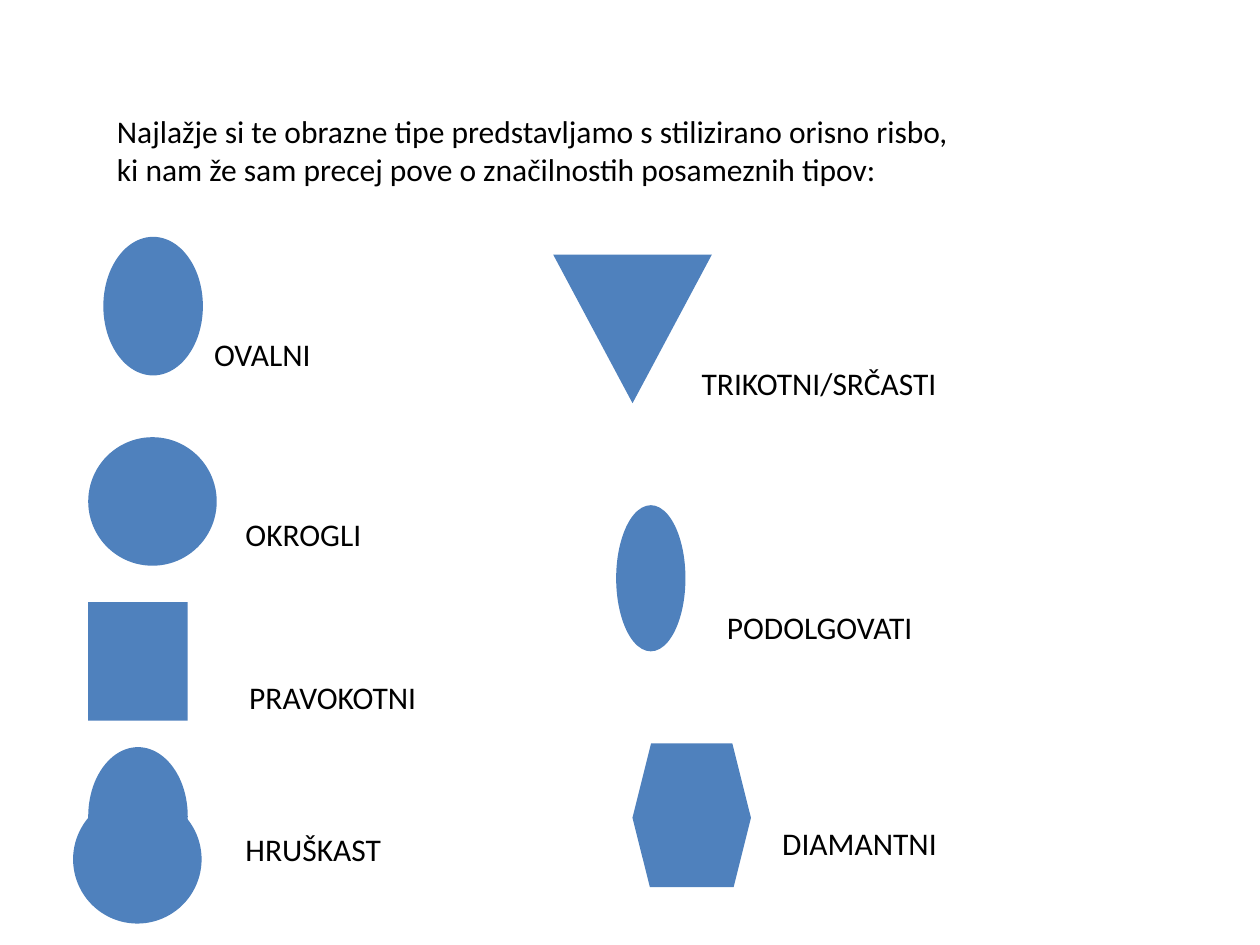
from dataclasses import dataclass

import pptx
import pptx.dml.color
import pptx.enum.shapes
import pptx.enum.text
import pptx.util

Inches = pptx.util.Inches
Kind = pptx.enum.shapes.MSO_SHAPE
COLORS = {"face": "4F81BD", "text": "000000"}


@dataclass
class FacePart:
    kind: Kind
    left: float
    top: float
    width: float
    height: float
    rotation: int = 0


@dataclass
class Label:
    text: str
    left: float
    top: float
    width: float
    height: float = 0.4
    wrap: bool = False


FACE_PARTS = [
    # Left column: oval, round, rectangular, pear
    FacePart(Kind.OVAL, 0.82, 1.88, 0.79, 1.1),
    FacePart(Kind.OVAL, 0.7, 3.47, 1.02, 1.02),
    FacePart(Kind.RECTANGLE, 0.7, 4.78, 0.79, 0.94),
    FacePart(Kind.OVAL, 0.58, 6.31, 1.02, 1.02),
    FacePart(Kind.OVAL, 0.7, 5.93, 0.79, 1.1),
    # Right column: triangular, elongated, diamond
    FacePart(Kind.ISOSCELES_TRIANGLE, 4.39, 2.02, 1.26, 1.18, 180),
    FacePart(Kind.OVAL, 4.89, 4.01, 0.55, 1.16),
    FacePart(Kind.TRAPEZOID, 5.02, 5.9, 0.94, 0.59),
    FacePart(Kind.TRAPEZOID, 5.02, 6.49, 0.94, 0.55, 180),
]

LABELS = [
    Label(
        "Najlažje si te obrazne tipe predstavljamo s stilizirano orisno risbo, "
        "ki nam že sam precej pove o značilnostih posameznih tipov:",
        0.83, 0.84, 6.93, 0.71, wrap=True,
    ),
    Label("OVALNI", 1.6, 2.61, 0.98),
    Label("OKROGLI", 1.85, 4.04, 1.13),
    Label("PRAVOKOTNI", 1.88, 5.33, 1.54),
    Label("HRUŠKAST", 1.85, 6.54, 1.3),
    Label("TRIKOTNI/SRČASTI", 5.47, 2.84, 2.08),
    Label("PODOLGOVATI", 5.67, 4.78, 1.69),
    Label("DIAMANTNI", 6.11, 6.49, 1.44),
]


def color(name: str) -> pptx.dml.color.RGBColor:
    return pptx.dml.color.RGBColor.from_string(COLORS[name])


def place(item: FacePart | Label) -> list[int]:
    return [Inches(n) for n in (item.left, item.top, item.width, item.height)]


def draw_face_part(page: pptx.slide.Slide, part: FacePart) -> None:
    shape = page.shapes.add_shape(part.kind, *place(part))
    shape.rotation = part.rotation
    shape.shadow.inherit = False
    shape.fill.solid()
    shape.fill.fore_color.rgb = color("face")
    shape.line.fill.background()


def draw_label(page: pptx.slide.Slide, label: Label) -> None:
    frame = page.shapes.add_textbox(*place(label)).text_frame
    frame.word_wrap = label.wrap
    frame.auto_size = pptx.enum.text.MSO_AUTO_SIZE.SHAPE_TO_FIT_TEXT
    span = frame.paragraphs[0].add_run()
    span.text = label.text
    span.font.name = "Calibri"
    span.font.size = pptx.util.Pt(18)
    span.font.color.rgb = color("text")


def main() -> None:
    deck = pptx.Presentation()
    deck.slide_width, deck.slide_height = Inches(10), Inches(7.5)
    page = deck.slides.add_slide(deck.slide_layouts.get_by_name("Blank"))

    # Face outlines
    for part in FACE_PARTS:
        draw_face_part(page, part)

    # Introduction and names of the face types
    for label in LABELS:
        draw_label(page, label)

    deck.save("out.pptx")


if __name__ == "__main__":
    main()
